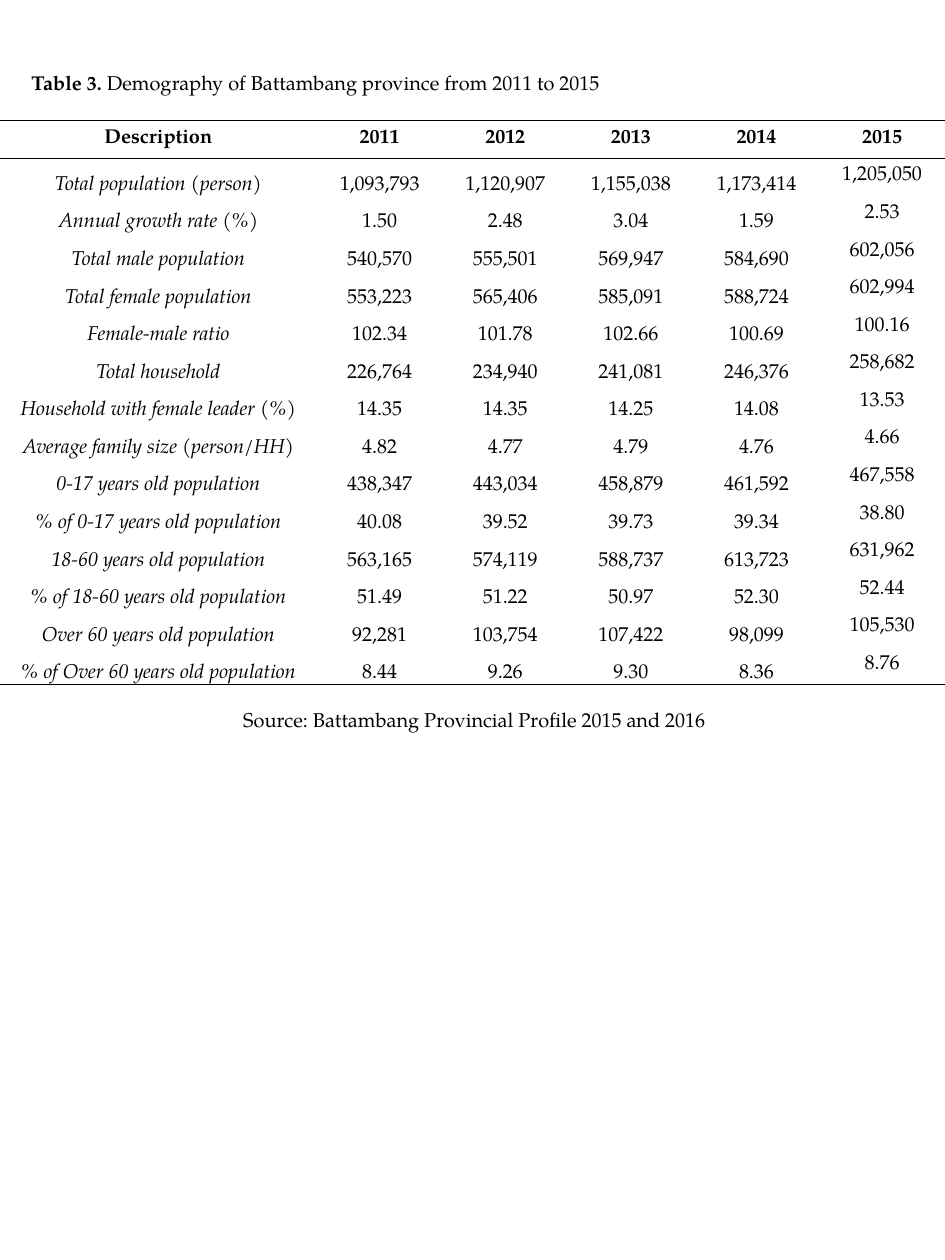
from lxml.etree import SubElement
from pptx import Presentation
from pptx.dml.color import RGBColor
from pptx.enum.text import MSO_ANCHOR as ANCHOR, MSO_AUTO_SIZE as AUTO, PP_ALIGN as ALIGN
from pptx.oxml.ns import qn
from pptx.util import Pt

BLACK = RGBColor(0, 0, 0)
FONT = "TeX Gyre Pagella"
LABEL_WIDTH, YEAR_WIDTH, ROW_HEIGHT = 253.5, 100.5, 30.1

HEADER = ["Description", "2011", "2012", "2013", "2014", "2015"]
ROWS = [
    ["Total population (person)", "1,093,793", "1,120,907", "1,155,038", "1,173,414", "1,205,050"],
    ["Annual growth rate (%)", "1.50", "2.48", "3.04", "1.59", "2.53"],
    ["Total male population", "540,570", "555,501", "569,947", "584,690", "602,056"],
    ["Total female population", "553,223", "565,406", "585,091", "588,724", "602,994"],
    ["Female-male ratio", "102.34", "101.78", "102.66", "100.69", "100.16"],
    ["Total household", "226,764", "234,940", "241,081", "246,376", "258,682"],
    ["Household with female leader (%)", "14.35", "14.35", "14.25", "14.08", "13.53"],
    ["Average family size (person/HH)", "4.82", "4.77", "4.79", "4.76", "4.66"],
    ["0-17 years old population", "438,347", "443,034", "458,879", "461,592", "467,558"],
    ["% of 0-17 years old population", "40.08", "39.52", "39.73", "39.34", "38.80"],
    ["18-60 years old population", "563,165", "574,119", "588,737", "613,723", "631,962"],
    ["% of 18-60 years old population", "51.49", "51.22", "50.97", "52.30", "52.44"],
    ["Over 60 years old population", "92,281", "103,754", "107,422", "98,099", "105,530"],
    ["% of Over 60 years old population", "8.44", "9.26", "9.30", "8.36", "8.76"],
]


def write(p, text, bold=False, italic=False, size=16, color=BLACK, font=FONT):
    r = p.add_run()
    r.text = text
    r.font.name = font
    r.font.size = Pt(size)
    r.font.bold = bold
    r.font.italic = italic
    r.font.color.rgb = color


class TableSlide:
    def __init__(self, prs):
        self.slide = prs.slides.add_slide(prs.slide_layouts[6])
        self.line_spacing = Pt(15)
        self.rule_width = Pt(1)
        self.cell_inset = Pt(5)

    def text(self, top, runs, align):
        sp = self.slide.shapes.add_textbox(Pt(18), Pt(top), Pt(723), Pt(26.6))
        tf = sp.text_frame
        tf.word_wrap = True
        tf.auto_size = AUTO.SHAPE_TO_FIT_TEXT
        tf.vertical_anchor = ANCHOR.MIDDLE
        p = tf.paragraphs[0]
        p.alignment = align
        for text, bold in runs:
            write(p, text, bold=bold)

    def borders(self, cell, ruled):
        cell.fill.background()
        tc_pr = cell._tc.get_or_add_tcPr()
        for i, side in enumerate("LRTB"):
            ln = SubElement(tc_pr, qn(f"a:ln{side}"))
            if side in ruled:
                ln.set("w", str(self.rule_width))
                fill = SubElement(ln, qn("a:solidFill"))
                SubElement(fill, qn("a:srgbClr")).set("val", str(BLACK))
            else:
                SubElement(ln, qn("a:noFill"))
            tc_pr.insert(i, ln)

    def cell(self, cell, text, anchor, ruled, **fmt):
        cell.margin_left = cell.margin_right = self.cell_inset
        cell.margin_top = cell.margin_bottom = 0
        cell.vertical_anchor = anchor
        p = cell.text_frame.paragraphs[0]
        p.alignment = ALIGN.CENTER
        p.line_spacing = self.line_spacing
        write(p, text, **fmt)
        self.borders(cell, ruled)

    def table(self, top, header, rows):
        data = [header, *rows]
        widths = [LABEL_WIDTH] + [YEAR_WIDTH] * (len(header) - 1)
        last_row, last_col = len(data) - 1, len(header) - 1
        table = self.slide.shapes.add_table(
            len(data), len(header), 0, Pt(top),
            Pt(sum(widths)), Pt(ROW_HEIGHT * len(data))).table
        table.first_row = table.horz_banding = False
        for col, width in zip(table.columns, widths):
            col.width = Pt(width)
        for i, values in enumerate(data):
            table.rows[i].height = Pt(ROW_HEIGHT)
            ruled = {0: "TB", 1: "T", last_row: "B"}.get(i, "")
            for j, value in enumerate(values):
                anchor = ANCHOR.MIDDLE if i == 0 or j == last_col else ANCHOR.BOTTOM
                self.cell(table.cell(i, j), value, anchor, ruled,
                          bold=i == 0, italic=i > 0 and j == 0)


def main():
    prs = Presentation()
    prs.slide_width, prs.slide_height = Pt(756), Pt(1008)
    s = TableSlide(prs)
    s.table(96.5, HEADER, ROWS)
    s.text(562.5, [("Source: Battambang Provincial Profile 2015 and 2016", False)], ALIGN.CENTER)
    s.text(52.5, [("Table 3.", True),
                  (" Demography of Battambang province from 2011 to 2015", False)], ALIGN.LEFT)
    prs.save("out.pptx")


if __name__ == "__main__":
    main()
